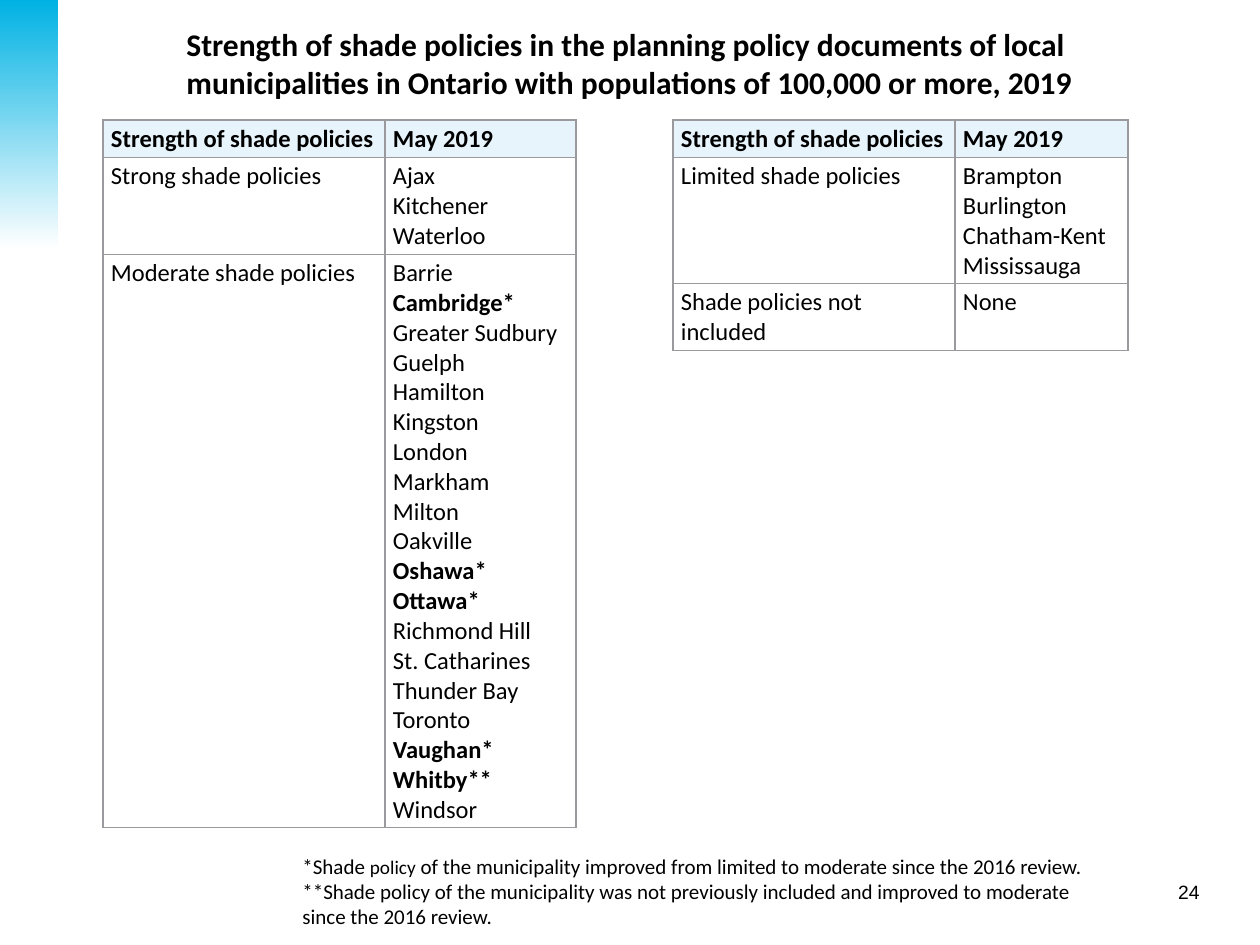
from dataclasses import dataclass

from lxml import etree
from pptx import Presentation
from pptx.dml.color import RGBColor
from pptx.enum.shapes import MSO_SHAPE
from pptx.enum.text import MSO_ANCHOR, PP_ALIGN
from pptx.oxml.ns import qn
from pptx.util import Emu, Pt

RECT = MSO_SHAPE.RECTANGLE
TOP, MIDDLE = MSO_ANCHOR.TOP, MSO_ANCHOR.MIDDLE
LEFT, RIGHT = PP_ALIGN.LEFT, PP_ALIGN.RIGHT
SCALE = 914400 // 126


@dataclass(frozen=True)
class Theme:
    """Colours, fonts and type sizes of the slide."""
    ink: str = "000000"
    line: str = "99999E"
    head: str = "E7F4FB"
    sky: str = "00B2E3"
    white: str = "FFFFFF"
    body: str = "Calibri"
    plain: str = "Arial"
    title: int = 18
    cell: int = 14
    note: int = 12
    small: int = 11


def px(count):
    """Turn whole pixels into EMU."""
    return Emu(count * SCALE)


def assign(target, values):
    """Set each named attribute on the target."""
    for name, value in values.items():
        setattr(target, name, value)


class Deck:
    """Draws styled elements on the current slide."""

    def __init__(self, theme, width, height):
        """Open a deck with one blank slide."""
        self.theme = theme
        self.file = Presentation()
        assign(self.file, {"slide_width": px(width), "slide_height": px(height)})
        self.slide = self.file.slides.add_slide(self.file.slide_layouts[6])

    def letter(self, frame, lines, align=LEFT, **style):
        """Fill a frame with paragraphs, each a list of text and format pairs."""
        base = {"name": self.theme.body, "bold": False, **style}
        for index, runs in enumerate(lines):
            para = frame.add_paragraph() if index else frame.paragraphs[0]
            para.alignment = align
            for text, extra in runs:
                run = para.add_run()
                run.text = text
                assign(run.font, {**base, **extra})
                run.font.color.rgb = RGBColor.from_string(self.theme.ink)

    def text(self, box, lines, anchor=TOP, **style):
        """Add a wrapped text box."""
        frame = self.slide.shapes.add_textbox(*map(px, box)).text_frame
        assign(frame, {"word_wrap": True, "vertical_anchor": anchor})
        self.letter(frame, lines, **style)

    def fade(self, box, colours):
        """Add a rectangle that fades downwards."""
        shape = self.slide.shapes.add_shape(RECT, *map(px, box))
        shape.shadow.inherit = False
        shape.line.fill.background()
        shape.fill.gradient()
        shape.fill.gradient_angle = 270
        for place, (stop, colour) in enumerate(zip(shape.fill.gradient_stops, colours)):
            stop.position = place
            stop.color.rgb = RGBColor.from_string(colour)

    def border(self, cell):
        """Draw a thin line on all four sides of a cell."""
        props = cell._tc.get_or_add_tcPr()
        for index, side in enumerate(("lnL", "lnR", "lnT", "lnB")):
            line = etree.Element(qn(f"a:{side}"), w=str(Pt(1)))
            fill = etree.SubElement(line, qn("a:solidFill"))
            etree.SubElement(fill, qn("a:srgbClr"), val=self.theme.line)
            props.insert(index, line)

    def table(self, left, top, widths, heights, rows):
        """Add a table whose starred names are bold."""
        box = left, top, sum(widths), sum(heights)
        grid = self.slide.shapes.add_table(len(rows), len(widths), *map(px, box)).table
        assign(grid, {"first_row": False, "horz_banding": False})
        for column, width in zip(grid.columns, widths):
            column.width = px(width)
        for row, height in zip(grid.rows, heights):
            row.height = px(height)
        pads = {"margin_left": px(8), "margin_right": px(8),
                "margin_top": px(4), "margin_bottom": px(4)}
        for r, row in enumerate(rows):
            for c, names in enumerate(row):
                cell = grid.cell(r, c)
                assign(cell, pads)
                lines = [[(name, {"bold": r == 0 or name.endswith("*")})] for name in names]
                self.letter(cell.text_frame, lines, size=Pt(self.theme.cell))
                if r == 0:
                    cell.fill.solid()
                    cell.fill.fore_color.rgb = RGBColor.from_string(self.theme.head)
                else:
                    cell.fill.background()
                self.border(cell)


def main():
    """Build and save the slide."""
    theme = Theme()
    deck = Deck(theme, 1260, 945)
    deck.text((1065, 873, 147, 37), [[("24", {})]], anchor=MIDDLE, align=RIGHT,
              name=theme.plain, size=Pt(theme.small))
    deck.fade((0, 0, 58, 249), (theme.sky, theme.white))
    title = ("Strength of shade policies in the planning policy documents of local "
             "municipalities in Ontario with populations of 100,000 or more, 2019")
    deck.text((174, 14, 1066, 97), [[(title, {})]], anchor=MIDDLE,
              size=Pt(theme.title), bold=True)

    head = ["Strength of shade policies"], ["May 2019"]
    strong = ["Ajax", "Kitchener", "Waterloo"]
    medium = ["Barrie", "Cambridge*", "Greater Sudbury", "Guelph", "Hamilton",
              "Kingston", "London", "Markham", "Milton", "Oakville", "Oshawa*",
              "Ottawa*", "Richmond Hill", "St. Catharines", "Thunder Bay",
              "Toronto", "Vaughan*", "Whitby**", "Windsor"]
    weak = ["Brampton", "Burlington", "Chatham-Kent", "Mississauga"]
    deck.table(103, 120, (282, 191), (37, 97, 573), [
        head,
        (["Strong shade policies"], strong),
        (["Moderate shade policies"], medium),
    ])
    deck.table(673, 120, (282, 173), (37, 126, 67), [
        head,
        (["Limited shade policies"], weak),
        (["Shade policies not included"], ["None"]),
    ])
    deck.text((290, 847, 825, 89), [
        [("*Shade ", {}), ("policy", {"size": Pt(theme.small)}),
         (" of the municipality improved from limited to moderate "
          "since the 2016 review.", {})],
        [("**Shade policy of the municipality was not previously included "
          "and improved to moderate since the 2016 review.", {})],
    ], size=Pt(theme.note))
    deck.file.save("out.pptx")


if __name__ == "__main__":
    main()
